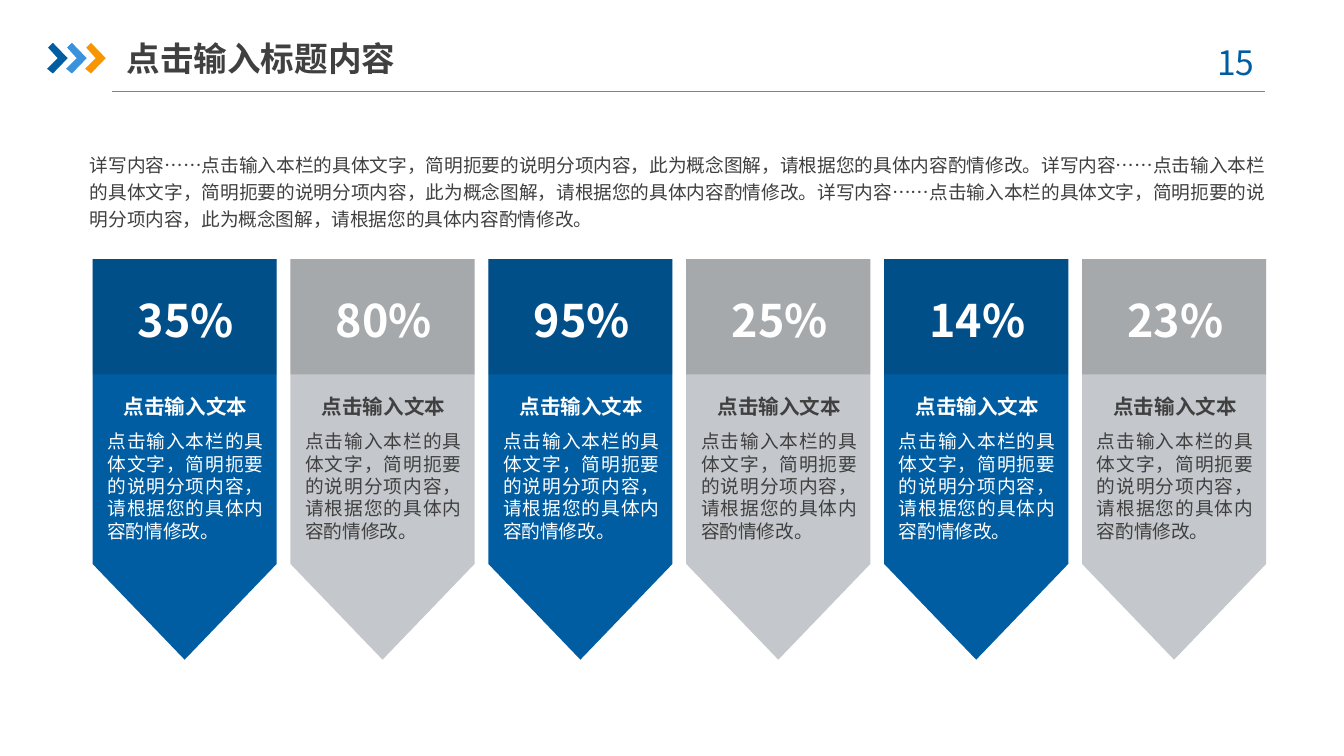
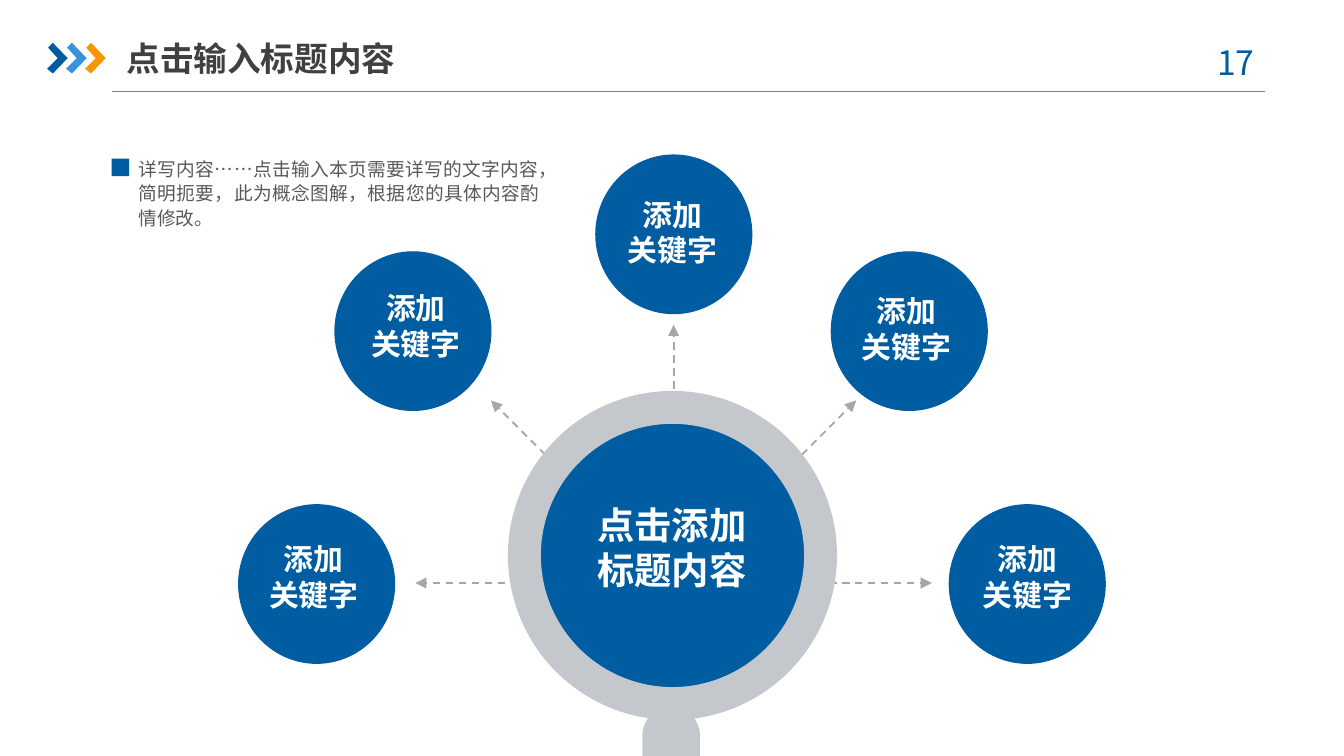
from math import cos, radians, sin

from lxml.etree import SubElement
from pptx import Presentation
from pptx.dml.color import RGBColor
from pptx.enum.dml import MSO_LINE
from pptx.enum.lang import MSO_LANGUAGE_ID as Lang
from pptx.enum.shapes import MSO_CONNECTOR, MSO_SHAPE as Preset
from pptx.enum.text import MSO_ANCHOR as Anchor, PP_ALIGN as Align
from pptx.oxml.ns import qn
from pptx.util import Cm, Pt

FONT = "Noto Sans CJK SC"
BLUE = RGBColor(0x00, 0x5D, 0xA2)
SKY = RGBColor(0x39, 0x92, 0xDB)
ORANGE = RGBColor(0xF7, 0x96, 0x00)
SILVER = RGBColor(0xC4, 0xC7, 0xCB)
RULE_GREY = RGBColor(0x80, 0x80, 0x80)
SPOKE_GREY = RGBColor(0xA6, 0xA6, 0xA6)
DARK = RGBColor(0x40, 0x40, 0x40)
NOTE_GREY = RGBColor(0x59, 0x59, 0x59)
BLACK = RGBColor(0, 0, 0)
WHITE = RGBColor(0xFF, 0xFF, 0xFF)

SNUG = (0.1, 0.05)
CHEVRON = [(0.02, 0.09), (0.11, 0), (0.39, 0.29), (0.11, 0.58), (0, 0.49), (0.2, 0.29)]

TITLE = "点击输入标题内容"
SENTENCE = ("详写内容……点击输入本栏的具体文字，简明扼要的说明分项内容，"
            "此为概念图解，请根据您的具体内容酌情修改。")
BANNER_TITLE = "点击输入文本"
BANNER_BODY = "点击输入本栏的具体文字，简明扼要的说明分项内容，请根据您的具体内容酌情修改。"
PERCENTAGES = ["35%", "80%", "95%", "25%", "14%", "23%"]
NOTE = ("详写内容……点击输入本页需要详写的文字内容，简明扼要，此为概念图解，"
        "根据您的具体内容酌情修改。")
KEYWORD = "添加\n关键字"
HUB = "点击添加\n标题内容"
KEYWORD_SPOTS = [
    ((4.5, 9.53), (4.7, 10.08)),
    ((6.32, 4.75), (6.63, 5.33)),
    ((11.25, 2.92), (11.48, 3.56)),
    ((15.7, 4.75), (15.9, 5.38)),
    ((17.93, 9.53), (18.19, 10.08)),
]


def add_text(slide, text, left, top, width, height, size=10, color=DARK, bold=False,
             align=Align.LEFT, anchor=Anchor.TOP, inset=(0.25, 0.13), leading=None):
    box = slide.shapes.add_textbox(Cm(left), Cm(top), Cm(width), Cm(height))
    frame = box.text_frame
    frame.word_wrap = True
    frame.vertical_anchor = anchor
    frame.margin_left = frame.margin_right = Cm(inset[0])
    frame.margin_top = frame.margin_bottom = Cm(inset[1])
    for index, line in enumerate(text.split("\n")):
        paragraph = frame.add_paragraph() if index else frame.paragraphs[0]
        paragraph.alignment = align
        paragraph.line_spacing = Pt(leading or size * 1.2)
        run = paragraph.add_run()
        run.text = line
        font = run.font
        font.size = Pt(size)
        font.bold = bold
        font.color.rgb = color
        font.language_id = Lang.SIMPLIFIED_CHINESE
        font.name = FONT
        SubElement(run._r.get_or_add_rPr(), qn("a:ea"), typeface=FONT)


def paint(shape, color, opacity=None):
    shape.shadow.inherit = False
    shape.fill.solid()
    shape.fill.fore_color.rgb = color
    shape.line.fill.background()
    if opacity is not None:
        tint = shape._element.spPr.find(qn("a:solidFill"))[0]
        SubElement(tint, qn("a:alpha"), val=str(opacity * 1000))


def add_preset(slide, preset, left, top, width, height, color, adjust=(), opacity=None):
    shape = slide.shapes.add_shape(preset, Cm(left), Cm(top), Cm(width), Cm(height))
    for index, value in enumerate(adjust):
        shape.adjustments[index] = value
    paint(shape, color, opacity)


def add_line(slide, start, end, color, weight, arrow=False):
    line = slide.shapes.add_connector(
        MSO_CONNECTOR.STRAIGHT, *(Cm(value) for value in (*start, *end)))
    line.line.color.rgb = color
    line.line.width = Pt(weight)
    if arrow:
        line.line.dash_style = MSO_LINE.DASH
        SubElement(line.line._get_or_add_ln(), qn("a:tailEnd"), type="triangle")
    SubElement(line._element.spPr, qn("a:effectLst"))


def add_chevron(slide, left, top, color):
    points = [(Cm(left + x), Cm(top + y)) for x, y in CHEVRON]
    builder = slide.shapes.build_freeform(*points[0], scale=1.0)
    builder.add_line_segments(points[1:], close=True)
    paint(builder.convert_to_shape(), color)


def add_header(slide, number):
    add_line(slide, (2.11, 1.73), (23.9, 1.73), RULE_GREY, 0.75)
    for index, color in enumerate((BLUE, SKY, ORANGE)):
        add_chevron(slide, 0.89 + index * 0.36, 0.81, color)
    add_text(slide, number, 22.43, 0.66, 1.85, 1.02, size=18, color=BLUE,
             align=Align.CENTER)
    add_text(slide, TITLE, 2.39, 0.56, 5.92, 1.07, size=18, bold=True,
             anchor=Anchor.MIDDLE, inset=(0, 0.13))


def add_banner(slide, left, percentage, color, ink):
    add_preset(slide, Preset.DOWN_ARROW, left, 4.9, 3.48, 7.57, color, adjust=(1, 0.52))
    add_preset(slide, Preset.RECTANGLE, left, 4.9, 3.48, 2.18, BLACK, opacity=15)
    add_text(slide, percentage, left + 0.38, 5.49, 2.77, 1.17, size=24, color=WHITE,
             bold=True, align=Align.CENTER, inset=SNUG)
    add_text(slide, BANNER_TITLE, left + 0.44, 7.39, 2.64, 0.66, size=11, color=ink,
             bold=True, align=Align.CENTER, inset=SNUG)
    add_text(slide, BANNER_BODY, left + 0.18, 8.08, 3.15, 1.73, color=ink,
             align=Align.JUSTIFY, inset=SNUG)


def add_keyword(slide, circle, label):
    add_preset(slide, Preset.OVAL, *circle, 2.97, 3.02, BLUE)
    add_text(slide, KEYWORD, *label, 2.46, 1.68, size=16, color=WHITE, bold=True,
             align=Align.CENTER, inset=(0.3, 0.15))


def add_spokes(slide, center, length):
    for degrees in range(0, 181, 45):
        angle = radians(degrees)
        tip = (center[0] + length * cos(angle), center[1] - length * sin(angle))
        add_line(slide, center, tip, SPOKE_GREY, 1, arrow=True)


def add_magnifier(slide):
    add_preset(slide, Preset.OVAL, 10.08, 7.9, 5.21, 5.21, BLUE)
    add_preset(slide, Preset.DONUT, 9.6, 7.39, 6.22, 6.22, SILVER, adjust=(0.1,))
    add_preset(slide, Preset.ROUNDED_RECTANGLE, 12.14, 13.36, 1.09, 2.24, SILVER,
               adjust=(0.5,))
    add_text(slide, HUB, 10.67, 9.37, 4.06, 1.96, size=20, color=WHITE, bold=True,
             align=Align.CENTER)


def build_banners(slide):
    add_header(slide, "15")
    add_text(slide, SENTENCE * 3, 1.6, 2.77, 22.4, 1.78, align=Align.JUSTIFY,
             inset=SNUG, leading=14.4)
    schemes = [(BLUE, WHITE), (SILVER, DARK)]
    for index, percentage in enumerate(PERCENTAGES):
        add_banner(slide, 1.75 + index * 3.74, percentage, *schemes[index % 2])


def build_keywords(slide):
    add_header(slide, "17")
    add_spokes(slide, (12.73, 11.02), 4.88)
    add_magnifier(slide)
    for circle, label in KEYWORD_SPOTS:
        add_keyword(slide, circle, label)
    add_text(slide, NOTE, 2.62, 2.95, 7.57, 1.4, color=NOTE_GREY, align=Align.JUSTIFY,
             inset=(0, 0), leading=13)
    add_preset(slide, Preset.RECTANGLE, 2.11, 3, 0.33, 0.33, BLUE)


def main():
    deck = Presentation()
    deck.slide_width, deck.slide_height = Cm(25.4), Cm(14.29)
    blank = deck.slide_layouts[6]
    for build in (build_banners, build_keywords):
        build(deck.slides.add_slide(blank))
    deck.save("out.pptx")


if __name__ == "__main__":
    main()
